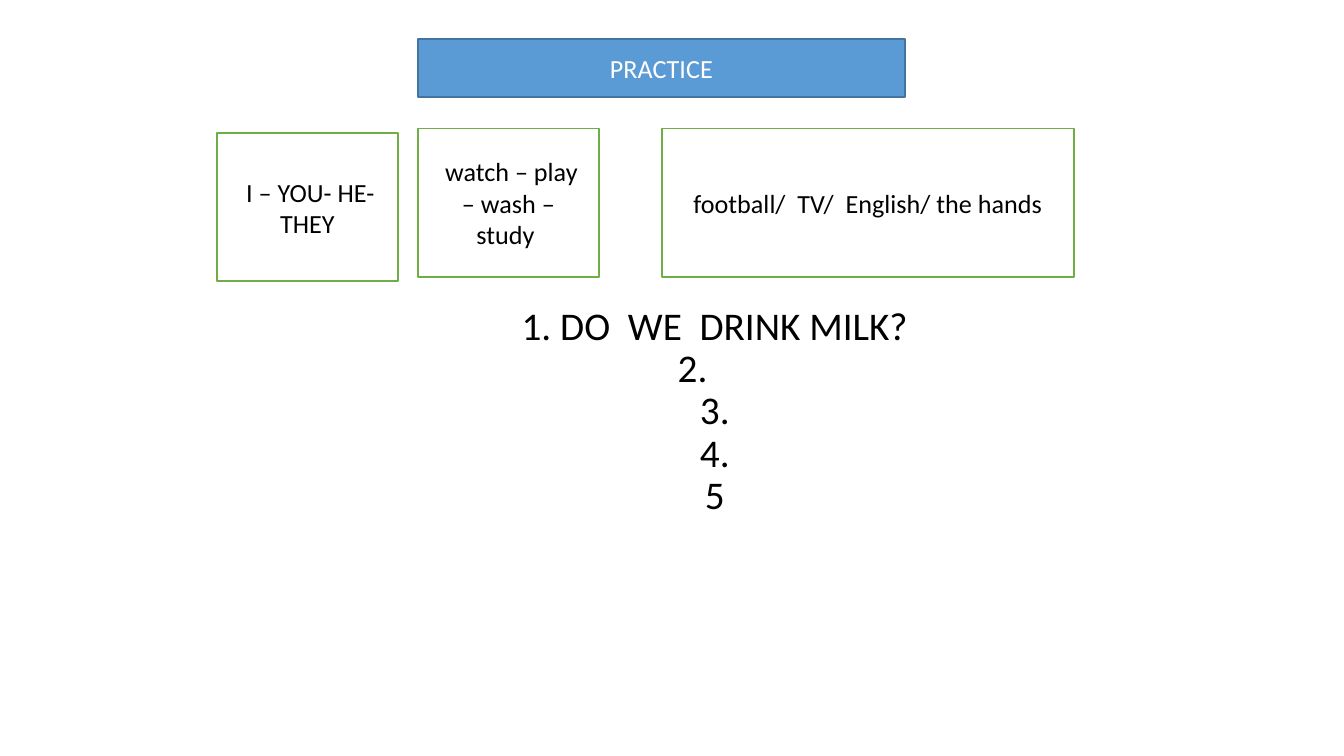
from dataclasses import dataclass

import pptx
import pptx.dml.color
import pptx.enum.shapes
import pptx.enum.text
import pptx.util

Cm = pptx.util.Cm
Pt = pptx.util.Pt
RGBColor = pptx.dml.color.RGBColor
PP_ALIGN = pptx.enum.text.PP_ALIGN
MSO_ANCHOR = pptx.enum.text.MSO_ANCHOR

BLACK = RGBColor(0x00, 0x00, 0x00)
WHITE = RGBColor(0xFF, 0xFF, 0xFF)
GREEN = RGBColor(0x70, 0xAD, 0x47)
BLUE = RGBColor(0x5B, 0x9B, 0xD5)
DARK_BLUE = RGBColor(0x43, 0x73, 0x9E)


@dataclass
class WordBox:
    text: str
    left: float
    top: float
    width: float


WORD_BOXES = [
    WordBox(" watch – play – wash – study ", 7.9, 2.43, 3.42),
    WordBox(" I – YOU- HE-THEY", 4.1, 2.52, 3.42),
    WordBox(" football/  TV/  English/ the hands ", 12.51, 2.43, 7.79),
]
WORD_BOX_HEIGHT = 2.8

# Each line of the exercise with its left margin in cm
LINES = [
    ("1. DO  WE  DRINK MILK?", 0.84),
    ("2.", 0),
    ("3.", 0.84),
    ("4.", 0.84),
    ("5", 0.84),
]


def write(p, text: str, *, size: float = 14, color: RGBColor = BLACK,
          spacing: float = 1.0, margin: float = 0) -> None:
    """Put centred, formatted text in a paragraph."""
    p.alignment = PP_ALIGN.CENTER
    p.line_spacing = spacing
    p.space_before = p.space_after = Pt(0)
    pPr = p._p.get_or_add_pPr()
    pPr.set("marL", str(Cm(margin)))
    pPr.set("indent", "0")
    r = p.add_run()
    r.text = text
    r.font.name = "Calibri"
    r.font.size = Pt(size)
    r.font.color.rgb = color


def style_box(sp, fill: RGBColor, line: RGBColor) -> None:
    """Give a box its fill, outline and text frame settings."""
    sp.fill.solid()
    sp.fill.fore_color.rgb = fill
    sp.line.color.rgb = line
    sp.line.width = Pt(1)
    tf = sp.text_frame
    tf.word_wrap = True
    tf.auto_size = pptx.enum.text.MSO_AUTO_SIZE.NONE
    tf.vertical_anchor = MSO_ANCHOR.MIDDLE


def add_word_box(s, box: WordBox) -> None:
    sp = s.shapes.add_shape(
        pptx.enum.shapes.MSO_SHAPE.RECTANGLE,
        Cm(box.left), Cm(box.top), Cm(box.width), Cm(WORD_BOX_HEIGHT))
    sp.shadow.inherit = False
    style_box(sp, WHITE, GREEN)
    write(sp.text_frame.paragraphs[0], box.text)


def add_exercise(s) -> None:
    sp = s.shapes.add_textbox(Cm(2.31), Cm(3.94), Cm(22.4), Cm(8))
    tf = sp.text_frame
    tf.word_wrap = True
    tf.margin_left, tf.margin_right = Cm(0.25), Cm(1.09)
    tf.margin_top, tf.margin_bottom = Cm(1.85), Cm(0.25)
    for i, (text, margin) in enumerate(LINES):
        p = tf.add_paragraph() if i else tf.paragraphs[0]
        write(p, text, size=21, spacing=0.9, margin=margin)


def main() -> None:
    prs = pptx.Presentation()
    prs.slide_width, prs.slide_height = Cm(25.4), Cm(14.29)
    s = prs.slides.add_slide(prs.slide_layouts[5])

    # Exercise lines, behind the word boxes
    add_exercise(s)

    # Word boxes
    for box in WORD_BOXES:
        add_word_box(s, box)

    # Title
    title = s.shapes.title
    title.left, title.top = Cm(7.9), Cm(0.74)
    title.width, title.height = Cm(9.2), Cm(1.09)
    style_box(title, BLUE, DARK_BLUE)
    write(title.text_frame.paragraphs[0], "PRACTICE", color=WHITE)

    prs.save("out.pptx")


if __name__ == "__main__":
    main()
